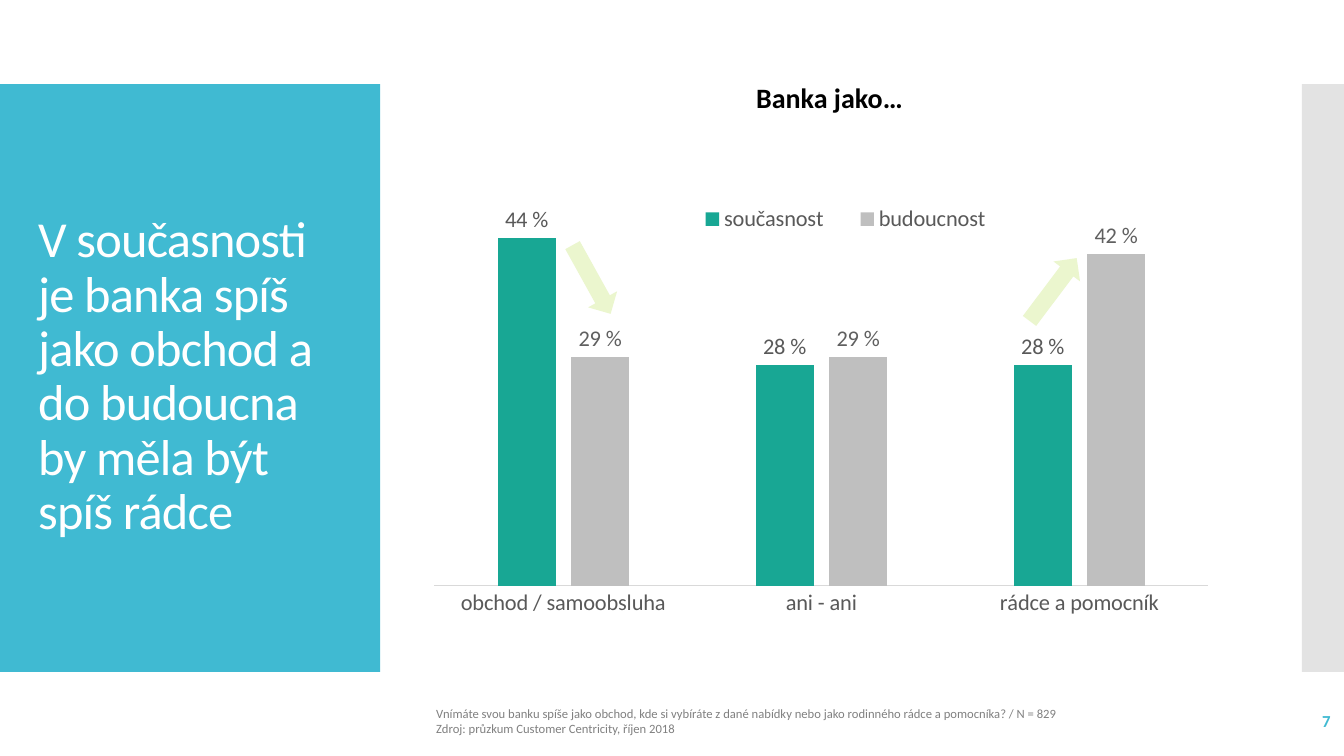
import pptx
import pptx.chart.data
import pptx.dml.color
import pptx.enum.chart
import pptx.enum.shapes
import pptx.enum.text
import pptx.oxml
import pptx.oxml.ns
import pptx.util

FONT = "Calibri"
COLORS = {
    "panel": "40BAD2", "band": "C8C8C8", "white": "FFFFFF", "black": "000000",
    "note": "808080", "label": "595959", "label_future": "606060",
    "axis": "D9D9D9", "now": "18A794", "future": "BFBFBF", "arrow": "EBF6CE",
}
# Slide grid: 32 columns by 18 rows of square cells
COLS, ROWS = 32, 18
WIDTH, HEIGHT = pptx.util.Inches(13.33), pptx.util.Inches(7.5)

CATEGORIES = ["obchod / samoobsluha", "ani - ani", "rádce a pomocník"]
SERIES = [
    ("současnost", [0.44, 0.28, 0.28], "now", "label"),
    ("budoucnost", [0.29, 0.29, 0.42], "future", "label_future"),
]
ALIGN = pptx.enum.text.PP_ALIGN
MIDDLE = pptx.enum.text.MSO_ANCHOR.MIDDLE
TOP = pptx.enum.text.MSO_ANCHOR.TOP
SHAPE = pptx.enum.shapes.MSO_SHAPE


def rgb(name):
    return pptx.dml.color.RGBColor.from_string(COLORS[name])


def grid(col, row, cols, rows):
    """Turn grid columns and rows into left, top, width, height."""
    return [int(n * size) for n, size in zip(
        (col, row, cols, rows),
        (WIDTH / COLS, HEIGHT / ROWS, WIDTH / COLS, HEIGHT / ROWS))]


def style(font, size, color, bold=False):
    font.name, font.size, font.bold = FONT, pptx.util.Pt(size), bold
    font.color.rgb = rgb(color)


def add_block(slide, kind, place, color, alpha=None, rotation=0):
    sp = slide.shapes.add_shape(kind, *grid(*place))
    sp.shadow.inherit = False
    sp.fill.solid()
    sp.fill.fore_color.rgb = rgb(color)
    sp.line.fill.background()
    sp.rotation = rotation
    if alpha is not None:
        clr = sp.fill._xPr.find(".//" + pptx.oxml.ns.qn("a:srgbClr"))
        clr.append(pptx.oxml.parse_xml(
            f'<a:alpha {pptx.oxml.ns.nsdecls("a")} val="{alpha * 1000}"/>'))


def add_text(slide, place, lines, size, color, align=ALIGN.LEFT,
             bold=False, anchor=MIDDLE):
    tf = slide.shapes.add_textbox(*grid(*place)).text_frame
    tf.word_wrap = True
    tf.vertical_anchor = anchor
    tf.text = "\n".join(lines)
    for p in tf.paragraphs:
        p.alignment = align
        style(p.font, size, color, bold)


def set_title(slide, place, text):
    title = slide.shapes.title
    title.left, title.top, title.width, title.height = grid(*place)
    tf = title.text_frame
    tf.word_wrap = True
    tf.auto_size = pptx.enum.text.MSO_AUTO_SIZE.NONE
    tf.vertical_anchor = MIDDLE
    p = tf.paragraphs[0]
    r = p.add_run()
    r.text = text
    r._r.get_or_add_rPr().set("spc", "-60")
    p.alignment = ALIGN.LEFT
    p.line_spacing = 0.9
    style(p.font, 36, "white")


def set_layout(element, x, y, w, h, inner=False):
    """Place the plot area or the legend by shares of the chart."""
    target = '<c:layoutTarget val="inner"/>' if inner else ""
    sizes = "".join(f'<c:{tag} val="{val}"/>'
                    for tag, val in zip("xywh", (x, y, w, h)))
    layout = pptx.oxml.parse_xml(
        f'<c:layout {pptx.oxml.ns.nsdecls("c")}><c:manualLayout>{target}'
        '<c:xMode val="edge"/><c:yMode val="edge"/>'
        f'{sizes}</c:manualLayout></c:layout>')
    for old in element.findall(pptx.oxml.ns.qn("c:layout")):
        element.remove(old)
    element.insert(0 if inner else 1, layout)


def add_columns(slide, place):
    data = pptx.chart.data.CategoryChartData(number_format="0%")
    data.categories = CATEGORIES
    for name, values, *_ in SERIES:
        data.add_series(name, values)
    chart = slide.shapes.add_chart(
        pptx.enum.chart.XL_CHART_TYPE.COLUMN_CLUSTERED,
        *grid(*place), data).chart
    style(chart.font, 10, "black")
    chart.has_title = False

    # Axes
    axis = chart.category_axis
    axis.major_tick_mark = pptx.enum.chart.XL_TICK_MARK.NONE
    axis.format.line.color.rgb = rgb("axis")
    axis.format.line.width = pptx.util.Pt(0.75)
    style(axis.tick_labels.font, 16, "label")
    values_axis = chart.value_axis
    values_axis.minimum_scale, values_axis.maximum_scale = 0, 0.5
    values_axis.has_major_gridlines = False
    values_axis.visible = False

    # Columns and their labels
    plot = chart.plots[0]
    plot.gap_width, plot.overlap = 219, -27
    plot.vary_by_categories = False
    for series, (_, _, fill, label) in zip(plot.series, SERIES):
        series.format.fill.solid()
        series.format.fill.fore_color.rgb = rgb(fill)
        labels = series.data_labels
        labels.show_value = True
        labels.number_format = "0 %"
        labels.number_format_is_linked = False
        labels.position = pptx.enum.chart.XL_LABEL_POSITION.OUTSIDE_END
        style(labels.font, 16, label)

    # Legend above the middle columns
    chart.has_legend = True
    legend = chart.legend
    legend.position = pptx.enum.chart.XL_LEGEND_POSITION.BOTTOM
    legend.include_in_layout = False
    style(legend.font, 16, "label")
    set_layout(legend._element, 0.31, 0.17, 0.42, 0.1)
    plot_area = chart._chartSpace.chart.plotArea
    set_layout(plot_area, 0.01, 0.17, 0.96, 0.7, inner=True)


def main():
    prs = pptx.Presentation()
    prs.slide_width, prs.slide_height = WIDTH, HEIGHT
    slide = prs.slides.add_slide(prs.slide_layouts[5])

    # Side panels, sent behind the title
    add_block(slide, SHAPE.RECTANGLE, (0, 2, 9.05, 14), "panel")
    add_block(slide, SHAPE.RECTANGLE, (31, 2, 1, 14), "band", alpha=50)
    tree = slide.shapes._spTree
    tree.append(slide.shapes.title._element)
    set_title(slide, (0.67, 2.95, 7.73, 12.07),
              "V současnosti je banka spíš jako obchod a do budoucna "
              "by měla být spíš rádce")

    # Footer
    add_text(slide, (10.15, 16.68, 15.5, 0.96), [
        "Vnímáte svou banku spíše jako obchod, kde si vybíráte z dané nabídky "
        "nebo jako rodinného rádce a pomocníka? / N = 829",
        "Zdroj: průzkum Customer Centricity, říjen 2018"], 9, "note")
    add_text(slide, (27.91, 16.68, 4.01, 0.96), ["7"], 12, "panel",
             align=ALIGN.RIGHT, bold=True)

    # Chart, trend arrows and heading
    add_columns(slide, (10.15, 2.26, 19.2, 13.44))
    for col, row, rotation in ((24.14, 6.5, 306.9), (13.15, 6.26, 61)):
        add_block(slide, SHAPE.RIGHT_ARROW, (col, row, 1.87, 0.79), "arrow",
                  rotation=rotation)
    add_text(slide, (15.31, 1.8, 8.88, 1.06), ["Banka jako…"], 20, "black",
             align=ALIGN.CENTER, bold=True, anchor=TOP)

    prs.save("out.pptx")


if __name__ == "__main__":
    main()
